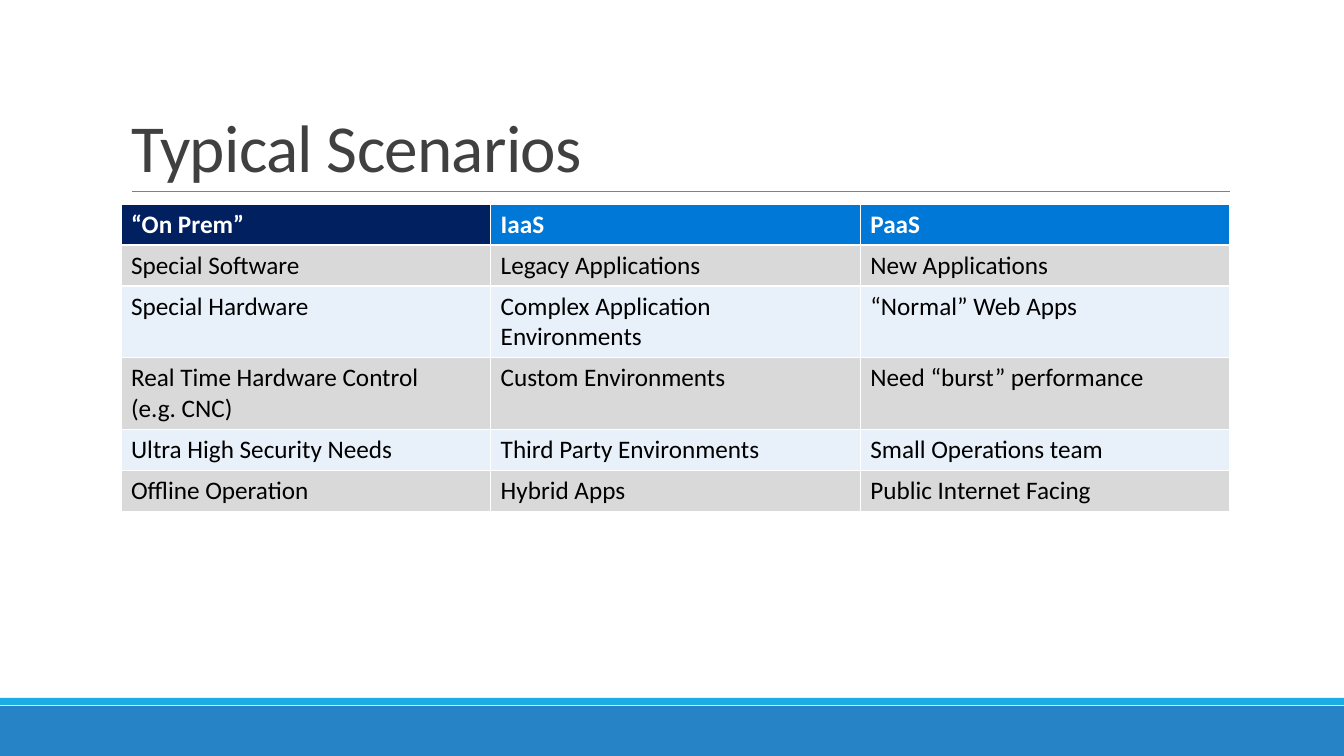
from lxml import etree
from pptx import Presentation
from pptx.dml.color import RGBColor
from pptx.enum.shapes import MSO_CONNECTOR, MSO_SHAPE
from pptx.enum.text import MSO_ANCHOR, MSO_AUTO_SIZE, PP_ALIGN
from pptx.oxml.ns import qn
from pptx.util import Pt

PX = 9071  # EMU in one pixel
RECTANGLE = MSO_SHAPE.RECTANGLE
STRAIGHT = MSO_CONNECTOR.STRAIGHT
BOTTOM = MSO_ANCHOR.BOTTOM
NO_AUTOFIT = MSO_AUTO_SIZE.NONE
LEFT = PP_ALIGN.LEFT


def color(hex_string):
    return RGBColor.from_string(hex_string)


def write(text_frame, text, size, font_color, bold=False, line_spacing=None, tracking=None):
    """Fill the frame, one paragraph a line; tracking is in hundredths of a point."""
    text_frame.text = text
    for paragraph in text_frame.paragraphs:
        paragraph.alignment = LEFT
        paragraph.line_spacing = line_spacing
        for run in paragraph.runs:
            run.font.name = "Calibri"
            run.font.size = Pt(size)
            run.font.bold = bold
            run.font.color.rgb = color(font_color)
            if tracking is not None:
                run._r.get_or_add_rPr().set("spc", str(tracking))


presentation = Presentation()
presentation.slide_width = 1344 * PX
presentation.slide_height = 756 * PX
slide = presentation.slides.add_slide(presentation.slide_layouts[5])

# Footer bars
for top, height, fill in [(706, 50, "2683C6"), (698, 7, "1CADE4")]:
    bar = slide.shapes.add_shape(RECTANGLE, 0, top * PX, 1344 * PX, height * PX)
    bar.shadow.inherit = False
    bar.fill.solid()
    bar.fill.fore_color.rgb = color(fill)
    bar.line.fill.background()

# Title and its rule
title = slide.shapes.title
title.left, title.top, title.width, title.height = 121 * PX, 31 * PX, 1109 * PX, 160 * PX
title.text_frame.word_wrap = True
title.text_frame.auto_size = NO_AUTOFIT
title.text_frame.vertical_anchor = BOTTOM
write(title.text_frame, "Typical Scenarios", 48, "404040", line_spacing=0.85, tracking=-50)

rule = slide.shapes.add_connector(STRAIGHT, 132 * PX, 191 * PX, 1230 * PX, 191 * PX)
rule.line.color.rgb = color("808080")
rule.line.width = Pt(0.5)
etree.SubElement(rule._element.spPr, qn("a:effectLst"))

# Scenario table
scenarios = [
    ("“On Prem”", "IaaS", "PaaS"),
    ("Special Software", "Legacy Applications", "New Applications"),
    ("Special Hardware", "Complex Application Environments", "“Normal” Web Apps"),
    ("Real Time Hardware Control\n(e.g. CNC)", "Custom Environments", "Need “burst” performance"),
    ("Ultra High Security Needs", "Third Party Environments", "Small Operations team"),
    ("Offline Operation", "Hybrid Apps", "Public Internet Facing"),
]
header_fills = ["002060", "0078D7", "0078D7"]
band_fills = ["E8F1FA", "D9D9D9"]

table = slide.shapes.add_table(
    len(scenarios), 3, 121 * PX, 204 * PX, 1109 * PX, len(scenarios) * 41 * PX
).table
for row_index, row in enumerate(scenarios):
    is_header = row_index == 0
    for column_index, text in enumerate(row):
        cell = table.cell(row_index, column_index)
        fill = header_fills[column_index] if is_header else band_fills[row_index % 2]
        cell.fill.solid()
        cell.fill.fore_color.rgb = color(fill)
        write(cell.text_frame, text, 18, "FFFFFF" if is_header else "000000", bold=is_header)

presentation.save("out.pptx")
